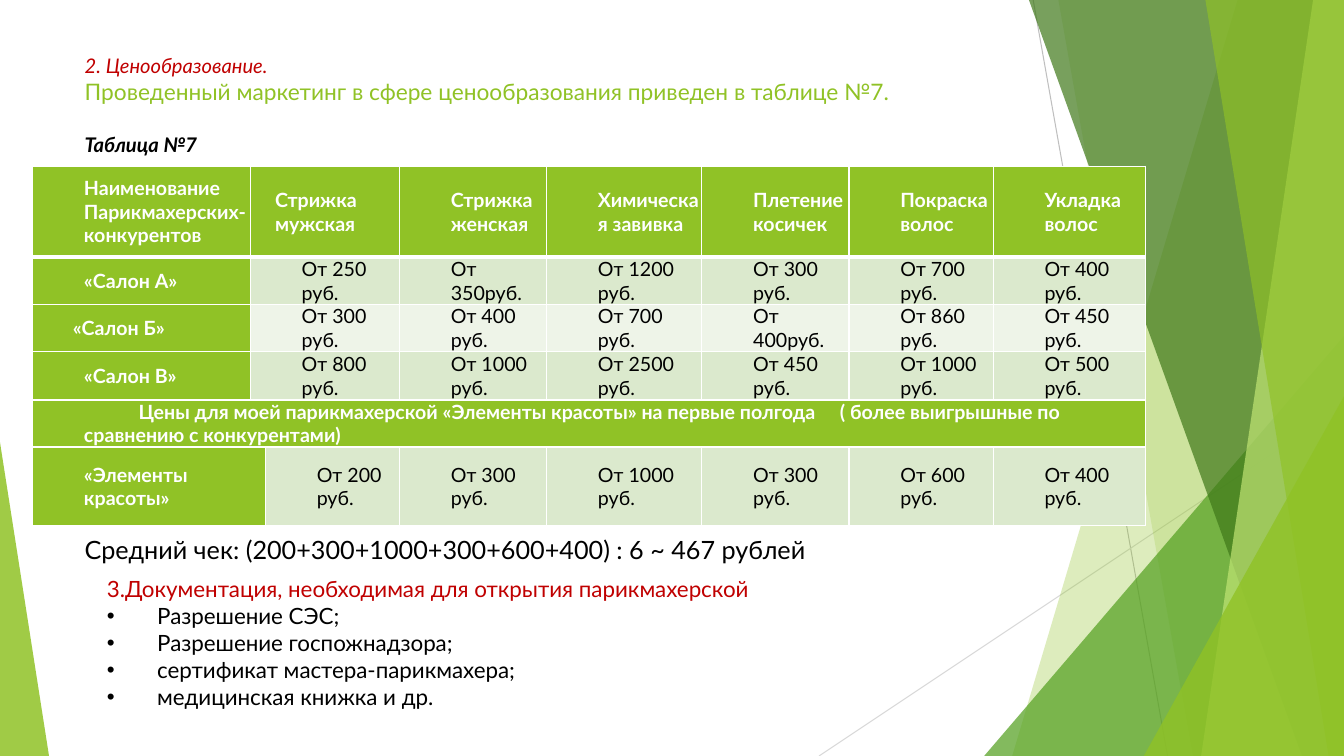
from dataclasses import dataclass
from typing import Any

from lxml import etree
from pptx import Presentation
from pptx import util as u
from pptx.dml.color import RGBColor
from pptx.enum import shapes, text
from pptx.oxml import ns

Pt = u.Pt
GREEN = RGBColor(0x90, 0xC2, 0x26)
MID_GREEN = RGBColor(0x54, 0xA0, 0x21)
DARK_GREEN = RGBColor(0x3F, 0x78, 0x19)
LIME = RGBColor(0xC0, 0xE4, 0x74)
BAND_DARK = RGBColor(0xDB, 0xE9, 0xCD)
BAND_LIGHT = RGBColor(0xEE, 0xF4, 0xE8)
RED = RGBColor(0xC0, 0x00, 0x00)
BLACK = RGBColor(0, 0, 0)
WHITE = RGBColor(0xFF, 0xFF, 0xFF)
GREY = RGBColor(0xBF, 0xBF, 0xBF)
LIGHT_GREY = RGBColor(0xD9, 0xD9, 0xD9)
WIDTH, HEIGHT = 960, 540


@dataclass
class Ray:
    start: tuple[float, float]
    end: tuple[float, float]
    colour: RGBColor


@dataclass
class Panel:
    top_x: float
    bottom_x: float
    colour: RGBColor
    opacity: int


@dataclass
class Wedge:
    left: float
    top: float
    width: float
    apex: float
    colour: RGBColor
    opacity: int


@dataclass
class PriceRow:
    name: str
    prices: list[str]
    band: RGBColor
    indent: float = 36


RAYS = [Ray((738, 0), (834, 540), GREY), Ray((960, 290), (585, 540), LIGHT_GREY)]
FACETS: list[Panel | Wedge] = [
    Panel(884, 723, GREEN, 30),
    Panel(756, 852, GREEN, 20),
    Wedge(703, 240, 257, 1, MID_GREEN, 72),
    Panel(735, 930, DARK_GREEN, 70),
    Panel(938, 858, LIME, 70),
    Panel(861, 949, GREEN, 65),
    Wedge(817, 283, 143, 1, GREEN, 80),
    Wedge(0, 316, 35, 0, GREEN, 85),
]
COLUMNS = [155.5, 10.8, 95.8, 105.1, 110.9, 105.1, 103, 108.7]
ROWS = [65, 33.6, 33.6, 34.6, 33.6, 56]
SERVICES = ["Стрижка женская", "Химическая завивка", "Плетение косичек",
            "Покраска волос", "Укладка волос"]
PRICES = {
    1: PriceRow("«Салон А»", ["250 руб.", "350руб.", "1200 руб.", "300 руб.",
                              "700 руб.", "400 руб."], BAND_DARK),
    2: PriceRow("«Салон Б»", ["300 руб.", "400 руб.", "700 руб.", "400руб.",
                              "860 руб.", "450 руб."], BAND_LIGHT, 28),
    3: PriceRow("«Салон В»", ["800 руб.", "1000 руб.", "2500 руб.", "450 руб.",
                              "1000 руб.", "500 руб."], BAND_DARK),
    5: PriceRow("«Элементы красоты»", ["200 руб.", "300 руб.", "1000 руб.", "300 руб.",
                                       "600 руб.", "400 руб."], BAND_DARK),
}
DOCUMENTS = ["Разрешение СЭС;", "Разрешение госпожнадзора;",
             "сертификат мастера-парикмахера;", "медицинская книжка и др."]


def add_span(para: Any, words: str, size: float, colour: RGBColor,
             bold: bool = False, italic: bool = False) -> None:
    span = para.add_run()
    span.text = words
    formats = {"name": "Lato", "size": Pt(size), "bold": bold, "italic": italic}
    for name, value in formats.items():
        setattr(span.font, name, value)
    span.font.color.rgb = colour


def set_indent(para: Any, margin: float, first: float = 0) -> Any:
    props = para._p.get_or_add_pPr()
    props.set("marL", str(Pt(margin)))
    props.set("indent", str(Pt(first)))
    return props


def next_para(frame: Any, index: int) -> Any:
    para = frame.add_paragraph() if index else frame.paragraphs[0]
    para.alignment = text.PP_ALIGN.LEFT
    para.space_before = Pt(0)
    return para


def place(box: Any, left: float, top: float, width: float, height: float) -> Any:
    bounds = {"left": left, "top": top, "width": width, "height": height}
    for name, value in bounds.items():
        setattr(box, name, Pt(value))
    formats = {"word_wrap": True, "auto_size": text.MSO_AUTO_SIZE.NONE,
               "vertical_anchor": text.MSO_ANCHOR.TOP}
    for name, value in formats.items():
        setattr(box.text_frame, name, value)
    box.element.getparent().append(box.element)
    return box.text_frame


def draw_ray(page: Any, ray: Ray) -> None:
    line = page.shapes.add_connector(shapes.MSO_CONNECTOR.STRAIGHT,
                                     *map(Pt, ray.start + ray.end))
    line.line.color.rgb = ray.colour
    line.line.width = Pt(0.75)
    etree.SubElement(line.element.spPr, ns.qn("a:effectLst"))


def draw_facet(page: Any, facet: Panel | Wedge) -> None:
    if isinstance(facet, Panel):
        builder = page.shapes.build_freeform(facet.top_x, 0, scale=Pt(1))
        builder.add_line_segments([(WIDTH, 0), (WIDTH, HEIGHT), (facet.bottom_x, HEIGHT)])
        shape = builder.convert_to_shape()
    else:
        shape = page.shapes.add_shape(
            shapes.MSO_SHAPE.ISOSCELES_TRIANGLE, Pt(facet.left), Pt(facet.top),
            Pt(facet.width), Pt(HEIGHT - facet.top))
        shape.adjustments[0] = facet.apex
    shape.shadow.inherit = False
    shape.line.fill.background()
    shape.fill.solid()
    shape.fill.fore_color.rgb = facet.colour
    colour = shape.element.spPr.find(".//" + ns.qn("a:srgbClr"))
    etree.SubElement(colour, ns.qn("a:alpha"), val=str(facet.opacity * 1000))


def style_cell(cell: Any, row: int, fill: RGBColor) -> None:
    formats = {"margin_left": Pt(0.7), "margin_right": Pt(0.7), "margin_top": 0,
               "margin_bottom": 0, "vertical_anchor": text.MSO_ANCHOR.MIDDLE}
    for name, value in formats.items():
        setattr(cell, name, value)
    thick = {(0, "lnB"), (1, "lnT")}
    props = cell._tc.get_or_add_tcPr()
    for side in ("lnL", "lnR", "lnT", "lnB"):
        weight = Pt(3 if (row, side) in thick else 1)
        edge = etree.SubElement(props, ns.qn("a:" + side), w=str(weight))
        paint = etree.SubElement(edge, ns.qn("a:solidFill"))
        etree.SubElement(paint, ns.qn("a:srgbClr"), val=str(WHITE))
    cell.fill.solid()
    cell.fill.fore_color.rgb = fill


def fill_cell(cell: Any, lines: list[str], colour: RGBColor, indent: float = 36,
              first: float = 0) -> None:
    for index, words in enumerate(lines):
        para = next_para(cell.text_frame, index)
        props = set_indent(para, indent, first)
        if "\t" in words:
            tabs = etree.SubElement(props, ns.qn("a:tabLst"))
            etree.SubElement(tabs, ns.qn("a:tab"), pos=str(Pt(596)), algn="l")
        add_span(para, words, 14, colour, bold=colour == WHITE)


def draw_table(page: Any) -> None:
    frame = page.shapes.add_table(len(ROWS), len(COLUMNS), Pt(23.3), Pt(118.8),
                                  Pt(sum(COLUMNS)), Pt(sum(ROWS)))
    table = frame.table
    table.first_row = table.horz_banding = False
    for column, width in zip(table.columns, COLUMNS):
        column.width = Pt(width)
    for row, height in zip(table.rows, ROWS):
        row.height = Pt(height)
    for row in range(len(ROWS)):
        name_columns = {4: 8, 5: 2}.get(row, 1)
        for column in range(len(COLUMNS)):
            green = row == 0 or column < name_columns
            style_cell(table.cell(row, column), row, GREEN if green else PRICES[row].band)
        start, end = {4: (0, 7), 5: (0, 1)}.get(row, (1, 2))
        table.cell(row, start).merge(table.cell(row, end))

    fill_cell(table.cell(0, 0), ["Наименование", "Парикмахерских-конкурентов"], WHITE)
    fill_cell(table.cell(0, 1), ["Стрижка", "мужская"], WHITE, 17)
    for column, service in enumerate(SERVICES, 3):
        fill_cell(table.cell(0, column), [service], WHITE)
    fill_cell(table.cell(4, 0), ["Цены для моей парикмахерской «Элементы красоты» на первые "
                                 "полгода\t( более выигрышные по сравнению с конкурентами)"],
              WHITE, first=39)
    for row, entry in PRICES.items():
        fill_cell(table.cell(row, 0), [entry.name], WHITE, entry.indent)
        columns = [2 if row == 5 else 1, *range(3, 8)]
        for column, price in zip(columns, entry.prices):
            fill_cell(table.cell(row, column), ["От " + price], BLACK)


def main() -> None:
    deck = Presentation()
    deck.slide_width, deck.slide_height = Pt(WIDTH), Pt(HEIGHT)
    page = deck.slides.add_slide(deck.slide_layouts[1])
    for ray in RAYS:
        draw_ray(page, ray)
    for facet in FACETS:
        draw_facet(page, facet)

    title = place(page.shapes.title, 53.3, 34.6, 676.8, 103.7)
    add_span(next_para(title, 0), "2. Ценообразование.", 14.4, RED, italic=True)
    add_span(next_para(title, 1), "Проведенный маркетинг в сфере ценообразования "
             "приведен в таблице №7.", 16.2, GREEN)
    caption = next_para(title, 2)
    caption.space_before = Pt(19.5)
    add_span(caption, "Таблица №7", 14.4, BLACK, bold=True, italic=True)

    draw_table(page)

    papers = place(page.placeholders[1], 69.1, 407.5, 480.2, 126)
    heading = next_para(papers, 0)
    etree.SubElement(set_indent(heading, 0), ns.qn("a:buNone"))
    add_span(heading, "3.Документация, необходимая для открытия парикмахерской", 16, RED)
    for index, document in enumerate(DOCUMENTS, 1):
        para = next_para(papers, index)
        etree.SubElement(set_indent(para, 36, -36), ns.qn("a:buChar"), char="•")
        add_span(para, document, 16, BLACK)

    average = place(page.shapes.add_textbox(0, 0, 0, 0), 53.3, 378, 634.3, 28.8)
    add_span(next_para(average, 0),
             "Средний чек: (200+300+1000+300+600+400) : 6 ~ 467 рублей", 18, BLACK)
    deck.save("out.pptx")


if __name__ == "__main__":
    main()
